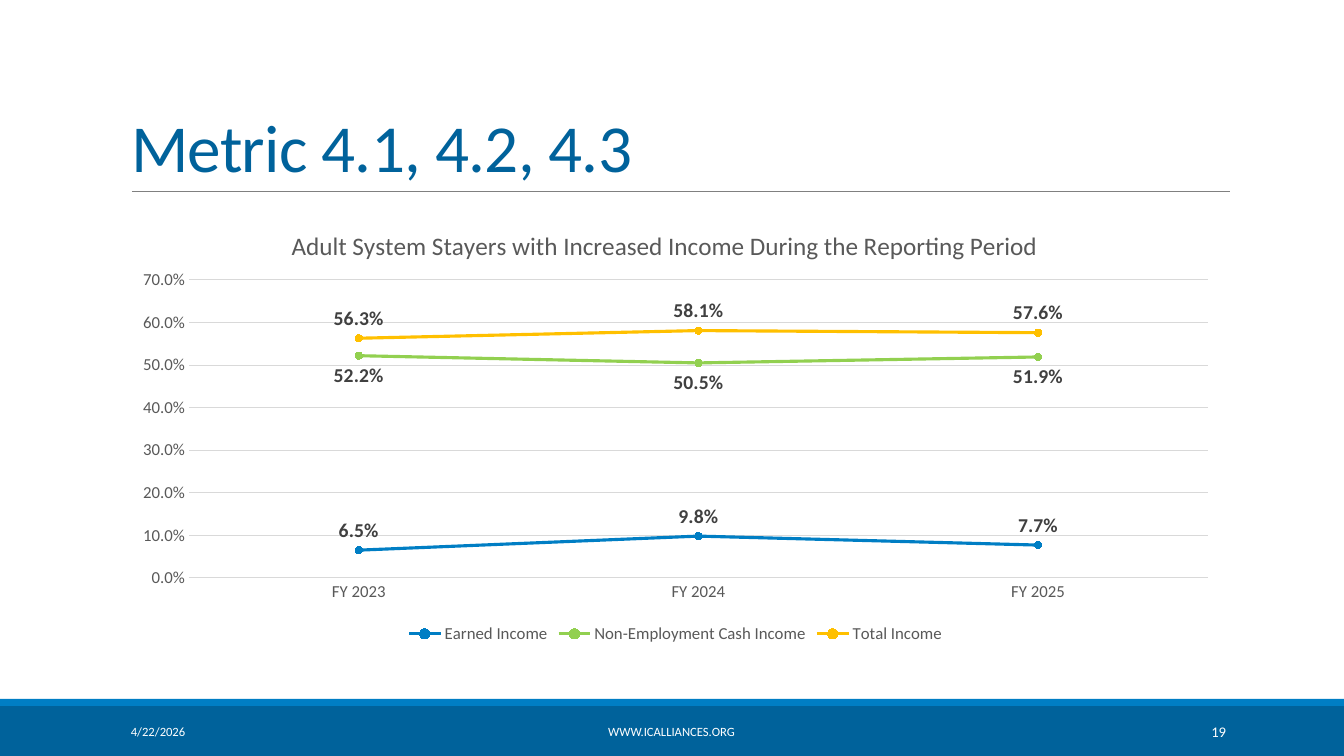
from dataclasses import dataclass
from pptx import Presentation
from pptx.chart.data import CategoryChartData as Data
from pptx.dml.color import RGBColor
from pptx.enum.chart import (
    XL_CHART_TYPE as Kind, XL_LABEL_POSITION as Pos, XL_LEGEND_POSITION as Side,
    XL_MARKER_STYLE as Mark, XL_TICK_MARK as Tick)
from pptx.enum.shapes import MSO_CONNECTOR as Wire, MSO_SHAPE as Form
from pptx.enum.text import MSO_ANCHOR as Anchor, MSO_AUTO_SIZE as Fit, PP_ALIGN as Align
from pptx.oxml import parse_xml
from pptx.oxml.ns import nsdecls, qn
from pptx.util import Emu, Pt

SCALE = 12192000 / 1344  # EMU in one px
FACE = "Calibri"
NAVY, BLUE, GREEN, GOLD = "00629B", "007EC4", "92D050", "FFC000"
WHITE, RULE, GRID, GREY, DARK = "FFFFFF", "808080", "D9D9D9", "595959", "404040"


@dataclass
class Box:
    x: int
    y: int
    w: int
    h: int

    def emu(self) -> list[Emu]:
        return [px(n) for n in (self.x, self.y, self.w, self.h)]


@dataclass
class Band:
    box: Box
    fill: str


@dataclass
class Note:
    text: str
    box: Box
    align: Align
    size: float


@dataclass
class Trend:
    name: str
    values: tuple[float, ...]
    color: str
    side: Pos


CHART = Box(121, 204, 1109, 444)
PLOT = Box(189, 280, 1019, 298)
HEAD = Box(287, 224, 775, 31)

BANDS = [Band(Box(0, 706, 1344, 50), NAVY), Band(Box(0, 699, 1344, 7), BLUE)]
NOTES = [
    Note("4/22/2026", Box(121, 712, 272, 40), Align.LEFT, 9),
    Note("WWW.ICALLIANCES.ORG", Box(406, 712, 531, 40), Align.CENTER, 9),
    Note("19", Box(1092, 712, 144, 40), Align.RIGHT, 10.5),
]
YEARS = ["FY 2023", "FY 2024", "FY 2025"]
TRENDS = [
    Trend("Earned Income", (0.065, 0.098, 0.077), BLUE, Pos.ABOVE),
    Trend("Non-Employment Cash Income", (0.522, 0.505, 0.519), GREEN, Pos.BELOW),
    Trend("Total Income", (0.563, 0.581, 0.576), GOLD, Pos.ABOVE),
]


def px(n: int) -> Emu:
    return Emu(round(n * SCALE))


def rgb(code: str) -> RGBColor:
    return RGBColor.from_string(code)


def apply(obj, form: dict) -> None:
    for key, value in form.items():
        setattr(obj, key, value)


def style(font, size: float, color: str, bold: bool = False) -> None:
    apply(font, {"name": FACE, "size": Pt(size), "bold": bold})
    font.color.rgb = rgb(color)


def stroke(line, color: str, width: float) -> None:
    line.color.rgb = rgb(color)
    line.width = Pt(width)


def paint(fill, color: str) -> None:
    fill.solid()
    fill.fore_color.rgb = rgb(color)


def add_band(slide, band: Band) -> None:
    shape = slide.shapes.add_shape(Form.RECTANGLE, *band.box.emu())
    shape.shadow.inherit = False
    paint(shape.fill, band.fill)
    shape.line.fill.background()


def add_rule(slide) -> None:
    line = slide.shapes.add_connector(Wire.STRAIGHT, px(132), px(191), px(1230), px(191))
    stroke(line.line, RULE, 0.5)
    line._element.spPr.append(parse_xml(f"<a:effectLst {nsdecls('a')}/>"))


def set_title(slide, text: str) -> None:
    title = slide.shapes.title
    box = Box(121, 31, 1109, 160)
    apply(title, dict(zip(("left", "top", "width", "height"), box.emu())))
    frame = title.text_frame
    apply(frame, {"text": text, "vertical_anchor": Anchor.BOTTOM,
                  "auto_size": Fit.NONE, "word_wrap": True})
    para = frame.paragraphs[0]
    apply(para, {"alignment": Align.LEFT, "line_spacing": 0.85})
    run = para.runs[0]
    style(run.font, 48, NAVY)
    run._r.get_or_add_rPr().set("spc", "-50")


def add_note(slide, note: Note) -> None:
    frame = slide.shapes.add_textbox(*note.box.emu()).text_frame
    apply(frame, {"text": note.text, "word_wrap": True, "vertical_anchor": Anchor.MIDDLE})
    para = frame.paragraphs[0]
    para.alignment = note.align
    style(para.runs[0].font, note.size, WHITE)


def place(part, index: int, box: Box, sized: bool) -> None:
    """Fix a chart part at a box, as shares of the chart frame."""
    for old in part.findall(qn("c:layout")):
        part.remove(old)
    rows = [("xMode", "edge"), ("yMode", "edge"),
            ("x", (box.x - CHART.x) / CHART.w), ("y", (box.y - CHART.y) / CHART.h)]
    if sized:
        rows = [("layoutTarget", "inner"), *rows,
                ("w", box.w / CHART.w), ("h", box.h / CHART.h)]
    body = "".join(f'<c:{tag} val="{value}"/>' for tag, value in rows)
    part.insert(index, parse_xml(
        f"<c:layout {nsdecls('c')}><c:manualLayout>{body}</c:manualLayout></c:layout>"))


def set_axes(chart) -> None:
    cat, val = chart.category_axis, chart.value_axis
    for axis in (cat, val):
        apply(axis, {"major_tick_mark": Tick.NONE, "minor_tick_mark": Tick.NONE})
        style(axis.tick_labels.font, 12, GREY)
    stroke(cat.format.line, GRID, 0.75)
    apply(val, {"minimum_scale": 0, "maximum_scale": 0.7, "major_unit": 0.1,
                "has_major_gridlines": True})
    stroke(val.major_gridlines.format.line, GRID, 0.75)
    val.format.line.fill.background()
    apply(val.tick_labels, {"number_format": "0.0%", "number_format_is_linked": False})


def set_trend(series, trend: Trend) -> None:
    series.smooth = False
    stroke(series.format.line, trend.color, 2.25)
    apply(series.marker, {"style": Mark.CIRCLE, "size": 5})
    paint(series.marker.format.fill, trend.color)
    stroke(series.marker.format.line, trend.color, 0.75)
    labels = series.data_labels
    apply(labels, {"show_value": True, "position": trend.side,
                   "number_format": "0.0%", "number_format_is_linked": False})
    style(labels.font, 14, DARK, True)


def add_graph(slide) -> None:
    data = Data(number_format="0.0%")
    data.categories = YEARS
    for trend in TRENDS:
        data.add_series(trend.name, trend.values)
    chart = slide.shapes.add_chart(Kind.LINE_MARKERS, *CHART.emu(), data).chart
    style(chart.font, 10, "000000")
    chart.plots[0].vary_by_categories = False

    # Heading and legend
    chart.has_title = True
    frame = chart.chart_title.text_frame
    frame.text = "Adult System Stayers with Increased Income During the Reporting Period"
    style(frame.paragraphs[0].runs[0].font, 18, GREY)
    chart.has_legend = True
    apply(chart.legend, {"position": Side.BOTTOM, "include_in_layout": False})
    style(chart.legend.font, 12, GREY)

    # Axes and lines
    set_axes(chart)
    for series, trend in zip(chart.plots[0].series, TRENDS):
        set_trend(series, trend)
    root = chart._chartSpace.chart
    place(root.find(qn("c:title")), 1, HEAD, False)
    place(root.plotArea, 0, PLOT, True)


def main() -> None:
    deck = Presentation()
    apply(deck, {"slide_width": px(1344), "slide_height": px(756)})
    slide = deck.slides.add_slide(deck.slide_layouts[5])
    for band in BANDS:
        add_band(slide, band)
    add_rule(slide)
    set_title(slide, "Metric 4.1, 4.2, 4.3")
    add_graph(slide)
    for note in NOTES:
        add_note(slide, note)
    deck.save("out.pptx")


if __name__ == "__main__":
    main()
